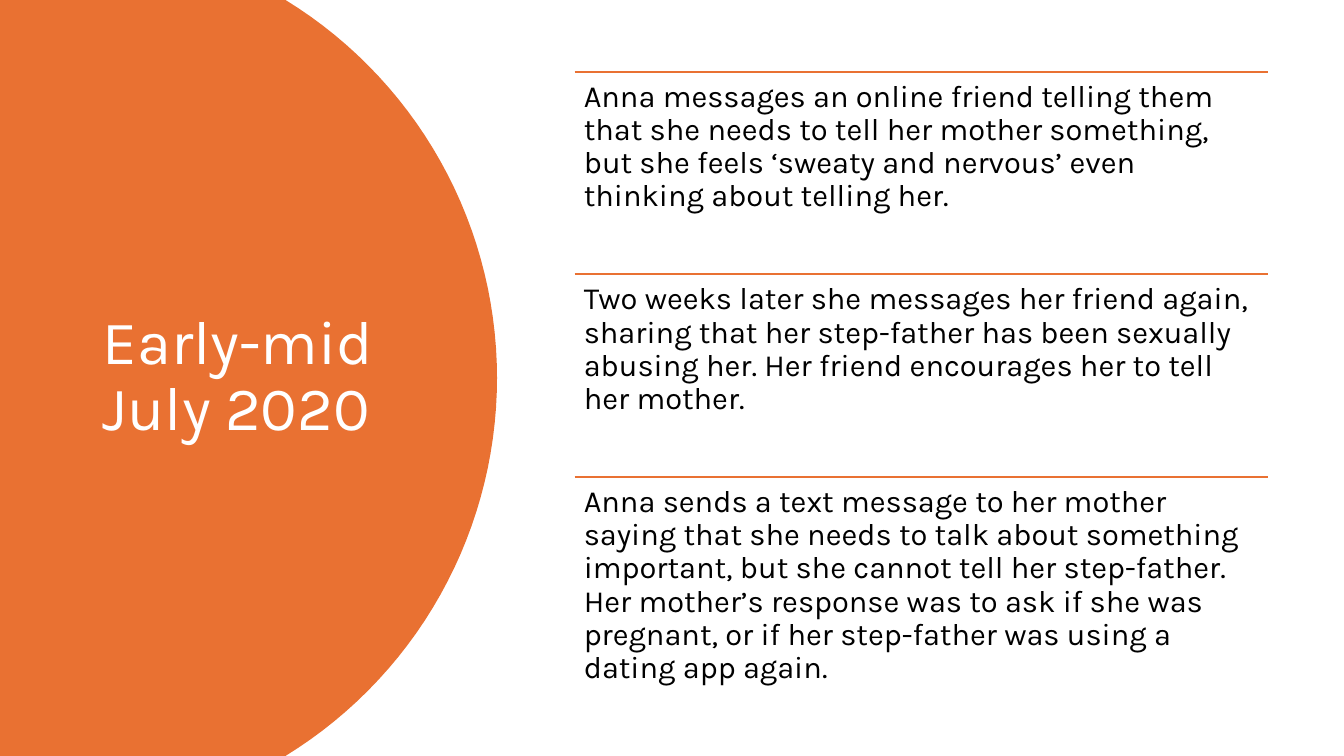
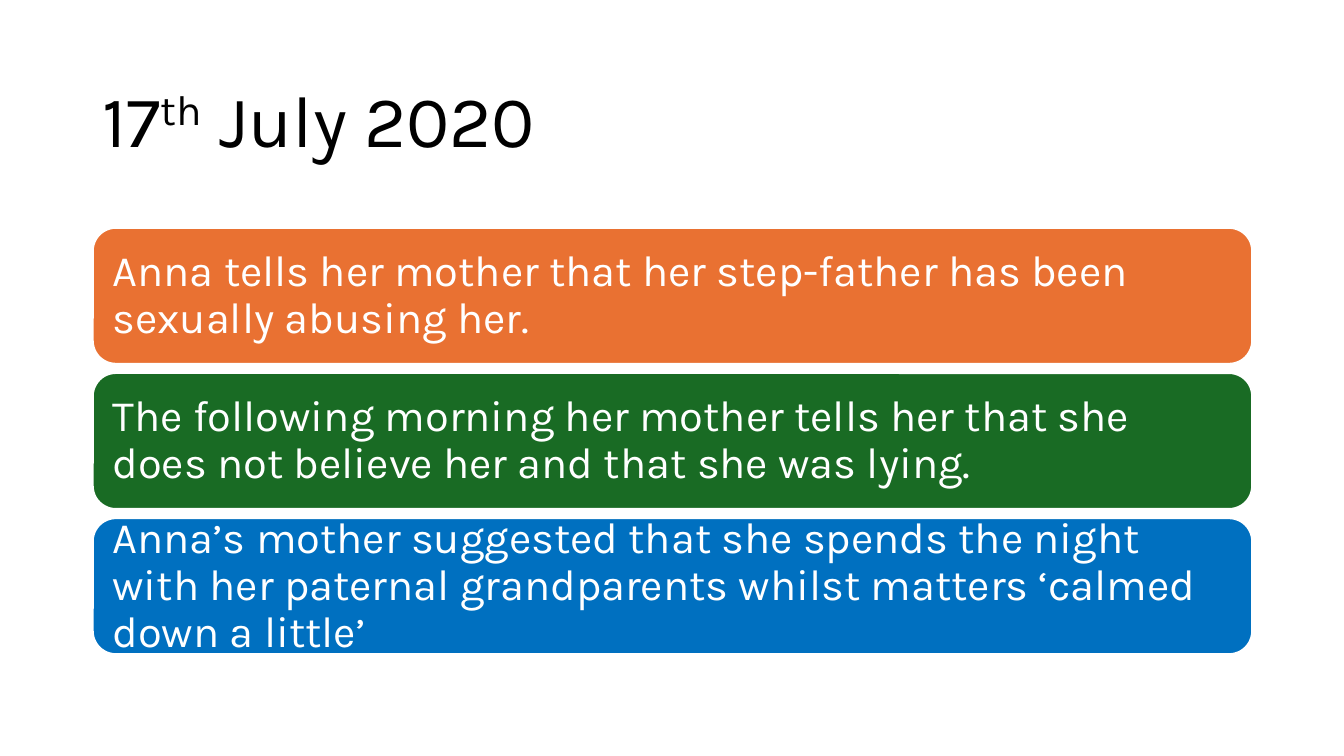
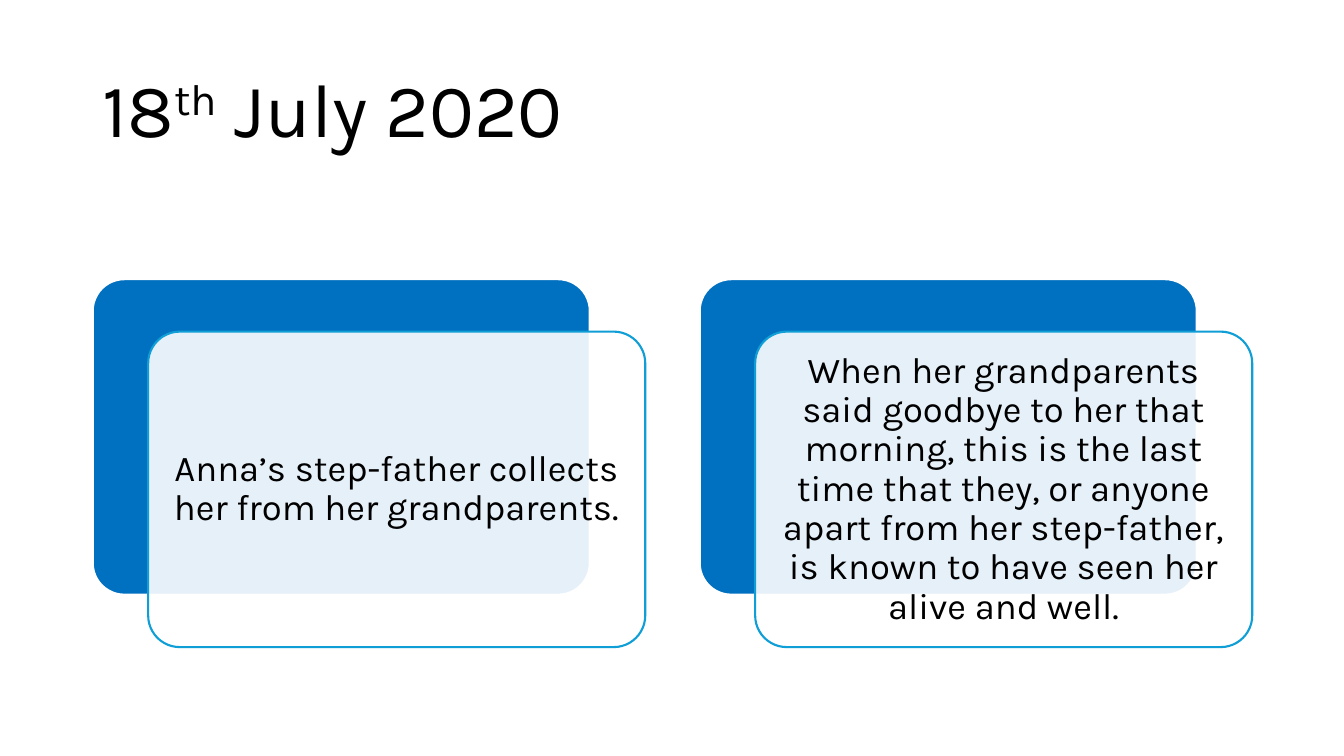
"""Builds three timeline slides about Anna, July 2020."""
from dataclasses import dataclass
from math import asin, cos, sin

from lxml.etree import SubElement
from pptx import Presentation
from pptx.dml.color import RGBColor
from pptx.enum.shapes import MSO_CONNECTOR, MSO_SHAPE
from pptx.enum.text import MSO_ANCHOR, PP_ALIGN
from pptx.oxml.ns import qn
from pptx.util import Inches, Pt


@dataclass(frozen=True)
class Theme:
    font: str = "Karla"
    black: RGBColor = RGBColor.from_string("000000")
    white: RGBColor = RGBColor.from_string("FFFFFF")
    orange: RGBColor = RGBColor.from_string("E97132")
    green: RGBColor = RGBColor.from_string("196B24")
    blue: RGBColor = RGBColor.from_string("0070C0")
    sky: RGBColor = RGBColor.from_string("0F9ED5")
    side_title: int = 44
    first_date: int = 52
    second_date: int = 54
    event: int = 22
    bar: int = 31
    card: int = 26
    rule: float = 1.5


THEME = Theme()


def write(shape, parts, size, color, inset=(0.1, 0.05),
          anchor=MSO_ANCHOR.MIDDLE, align=PP_ALIGN.LEFT):
    frame = shape.text_frame
    frame.word_wrap = True
    frame.vertical_anchor = anchor
    frame.margin_left = frame.margin_right = Inches(inset[0])
    frame.margin_top = frame.margin_bottom = Inches(inset[1])
    paragraph = frame.paragraphs[0]
    paragraph.alignment = align
    paragraph.line_spacing = 0.9
    for part in parts:
        run = paragraph.add_run()
        run.text = part
        run.font.name = THEME.font
        run.font.size = Pt(size)
        run.font.color.rgb = color
        if part == "th":
            run.font._element.set("baseline", "30000")


def add_panel(slide, left, top, width, height, fill, line, corner):
    panel = slide.shapes.add_shape(
        MSO_SHAPE.ROUNDED_RECTANGLE,
        Inches(left), Inches(top), Inches(width), Inches(height))
    panel.adjustments[0] = corner
    panel.shadow.inherit = False
    panel.fill.solid()
    panel.fill.fore_color.rgb = fill
    panel.line.color.rgb = line
    panel.line.width = Pt(THEME.rule)
    return panel


deck = Presentation()
deck.slide_width = Inches(13.33)
deck.slide_height = Inches(7.5)

titles = [
    (["Early-mid July 2020"], (0.92, 0.7, 3.23, 6.09), THEME.side_title, THEME.white),
    (["17", "th", " July 2020"], (0.92, 0.61, 11.5, 1.24), THEME.first_date, THEME.black),
    (["18", "th", " July 2020"], (0.92, 0.4, 11.5, 1.45), THEME.second_date, THEME.black),
]
early_july, disclosure, last_seen = [
    deck.slides.add_slide(deck.slide_layouts[6]) for _ in titles]

middle, radius, right_edge = 3.75, 4.4, 4.93
half_angle = asin(middle / radius)
steps = 60
angles = [half_angle * (2 * step / steps - 1) for step in range(steps + 1)]
arc = [(Inches(right_edge - radius + radius * cos(angle)),
        Inches(middle + radius * sin(angle))) for angle in angles]
outline = early_july.shapes.build_freeform(0, 0)
outline.add_line_segments(arc + [(0, Inches(7.5))], close=True)
dome = outline.convert_to_shape()
dome.shadow.inherit = False
dome.fill.solid()
dome.fill.fore_color.rgb = THEME.orange
dome.line.fill.background()

for slide, (parts, place, size, color) in zip(deck.slides, titles):
    title = slide.shapes.add_textbox(*map(Inches, place))
    write(title, parts, size, color)

events = [
    "Anna messages an online friend telling them that she needs to tell her mother "
    "something, but she feels ‘sweaty and nervous’ even thinking about telling her.",
    "Two weeks later she messages her friend again, sharing that her step-father has "
    "been sexually abusing her. Her friend encourages her to tell her mother.",
    "Anna sends a text message to her mother saying that she needs to talk about "
    "something important, but she cannot tell her step-father. Her mother’s response "
    "was to ask if she was pregnant, or if her step-father was using a dating app again.",
]
event_left, event_width, event_height = 5.7, 6.88, 2.01
for row, text in enumerate(events):
    top = Inches(0.71 + row * event_height)
    rule = early_july.shapes.add_connector(
        MSO_CONNECTOR.STRAIGHT, Inches(event_left), top,
        Inches(event_left + event_width), top)
    rule.line.color.rgb = THEME.orange
    rule.line.width = Pt(THEME.rule)
    SubElement(rule._element.spPr, qn("a:effectLst"))
    event = early_july.shapes.add_textbox(
        Inches(event_left), top, Inches(event_width), Inches(event_height))
    write(event, [text], THEME.event, THEME.black, (0.09, 0.09), MSO_ANCHOR.TOP)

bars = [
    ("Anna tells her mother that her step-father has been sexually abusing her.",
     THEME.orange),
    ("The following morning her mother tells her that she does not believe her "
     "and that she was lying.", THEME.green),
    ("Anna’s mother suggested that she spends the night with her paternal "
     "grandparents whilst matters ‘calmed down a little’", THEME.blue),
]
bar_height, bar_gap = 1.35, 0.09
for row, (text, fill) in enumerate(bars):
    bar = add_panel(disclosure, 0.92, 2.26 + row * (bar_height + bar_gap),
                    11.5, bar_height, fill, THEME.white, 0.17)
    write(bar, [text], THEME.bar, THEME.white, (0.13, 0.13))

cards = [
    "Anna’s step-father collects her from her grandparents.",
    "When her grandparents said goodbye to her that morning, this is the last time "
    "that they, or anyone apart from her step-father, is known to have seen her "
    "alive and well.",
]
card_width, card_height = 4.93, 3.13
for column, text in enumerate(cards):
    left = 0.92 + column * 6.02
    add_panel(last_seen, left, 2.77, card_width, card_height,
              THEME.blue, THEME.white, 0.1)
    card = add_panel(last_seen, left + 0.55, 3.29, card_width, card_height,
                     THEME.white, THEME.sky, 0.1)
    card_fill = card._element.spPr.find(qn("a:solidFill")).find(qn("a:srgbClr"))
    SubElement(card_fill, qn("a:alpha"), val="90000")
    write(card, [text], THEME.card, THEME.black, (0.11, 0.11), align=PP_ALIGN.CENTER)

deck.save("out.pptx")
